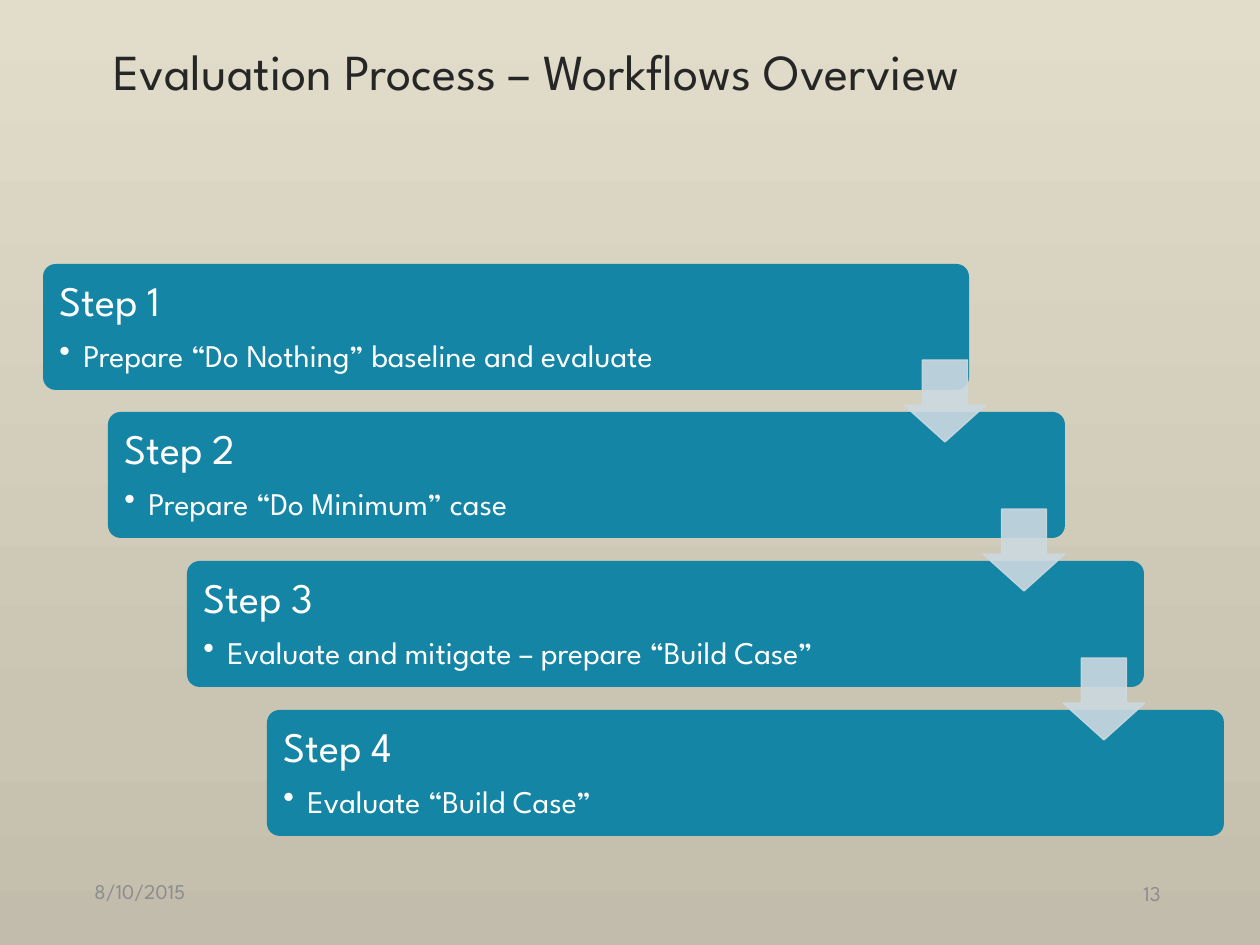
"""Build the workflow overview slide: four stepped cards joined by arrows."""
from copy import deepcopy

from lxml.etree import SubElement
from pptx import Presentation
from pptx.dml.color import RGBColor
from pptx.enum.shapes import MSO_SHAPE as SHAPE
from pptx.enum.text import MSO_ANCHOR as ANCHOR, PP_ALIGN as ALIGN
from pptx.oxml.ns import qn
from pptx.util import Pt

PX = 914400 // 126
FONT = "League Spartan"
CARD, ARROW, WHITE, DARK, GREY = "1485A4", "CCD9E0", "FFFFFF", "262626", "8C8C8C"
BACKGROUND = [(0, "E2DCCA"), (0.77, "CAC4B2"), (1, "C2BCAC")]
CARD_H, CARD_PAD, ARROW_SIZE = 126, 4, 82
ARROW_DX, ARROW_DY = -161, -52

LABELS = [
    ("Evaluation Process – Workflows Overview", (101, 18, 1058, 105), 28.8, DARK, ALIGN.LEFT),
    ("8/10/2015", (82, 866, 283, 50), 12, GREY, ALIGN.LEFT),
    ("13", (890, 868, 283, 50), 12, GREY, ALIGN.RIGHT),
]
STEPS = [
    ("Step 1", "Prepare “Do Nothing” baseline and evaluate", (43, 264, 926), 784),
    ("Step 2", "Prepare “Do Minimum” case", (108, 412, 957), 788),
    ("Step 3", "Evaluate and mitigate – prepare “Build Case”", (187, 561, 957), 788),
    ("Step 4", "Evaluate “Build Case”", (267, 710, 957), 788),
]


def rgb(color):
    return RGBColor.from_string(color)


def emu(*lengths):
    return [n * PX for n in lengths]


def paint_background(s):
    fill = s.background.fill
    fill.gradient()
    fill.gradient_angle = 270
    stops = s.element.find(".//" + qn("a:gsLst"))
    stops.append(deepcopy(stops[-1]))
    for stop, (position, color) in zip(fill.gradient_stops, BACKGROUND):
        stop.position = position
        stop.color.rgb = rgb(color)


def add_shape(s, kind, box, color, *adjustments):
    sp = s.shapes.add_shape(kind, *emu(*box))
    sp.shadow.inherit = False
    sp.fill.solid()
    sp.fill.fore_color.rgb = rgb(color)
    sp.line.fill.background()
    for i, value in enumerate(adjustments):
        sp.adjustments[i] = value
    return sp


def add_frame(s, box):
    tf = s.shapes.add_textbox(*emu(*box)).text_frame
    tf.word_wrap = True
    tf.vertical_anchor = ANCHOR.MIDDLE
    return tf


def write(p, text, size, color):
    p.text = text
    for r in p.runs:
        r.font.name, r.font.size = FONT, Pt(size)
        r.font.color.rgb = rgb(color)


def space_after(p, percent):
    after = SubElement(p._p.get_or_add_pPr(), qn("a:spcAft"))
    SubElement(after, qn("a:spcPct")).set("val", str(percent * 1000))


def add_bullet(p, indent):
    pPr = p._p.get_or_add_pPr()
    pPr.set("marL", str(indent * PX))
    pPr.set("indent", str(-indent * PX))
    SubElement(pPr, qn("a:buChar")).set("char", "•")


def add_step(s, name, detail, place, text_width):
    left, top, width = place
    add_shape(s, SHAPE.ROUNDED_RECTANGLE, (left, top, width, CARD_H), CARD, 0.1)
    tf = add_frame(s, (left + CARD_PAD, top + CARD_PAD, text_width, CARD_H - 2 * CARD_PAD))
    tf.margin_left = tf.margin_right = tf.margin_top = tf.margin_bottom = Pt(7.2)
    head, item = tf.paragraphs[0], tf.add_paragraph()
    head.line_spacing = item.line_spacing = 0.9
    item.level = 1
    space_after(head, 35)
    space_after(item, 15)
    add_bullet(item, 24)
    write(head, name, 24, WHITE)
    write(item, detail, 18, WHITE)


def add_arrow(s, place):
    left, top, width = place
    box = (left + width + ARROW_DX, top + ARROW_DY, ARROW_SIZE, ARROW_SIZE)
    sp = add_shape(s, SHAPE.DOWN_ARROW, box, ARROW, 0.55, 0.45)
    sp.line.color.rgb = rgb(ARROW)
    sp.line.width = Pt(0.75)
    for color in sp._element.spPr.iter(qn("a:srgbClr")):
        SubElement(color, qn("a:alpha")).set("val", "90000")


def main():
    prs = Presentation()
    prs.slide_width, prs.slide_height = emu(1260, 945)
    s = prs.slides.add_slide(prs.slide_layouts[6])
    paint_background(s)
    for step in STEPS:
        add_step(s, *step)
    for _, _, place, _ in STEPS[1:]:
        add_arrow(s, place)
    for text, box, size, color, align in LABELS:
        p = add_frame(s, box).paragraphs[0]
        p.alignment = align
        write(p, text, size, color)
    prs.save("out.pptx")


if __name__ == "__main__":
    main()
